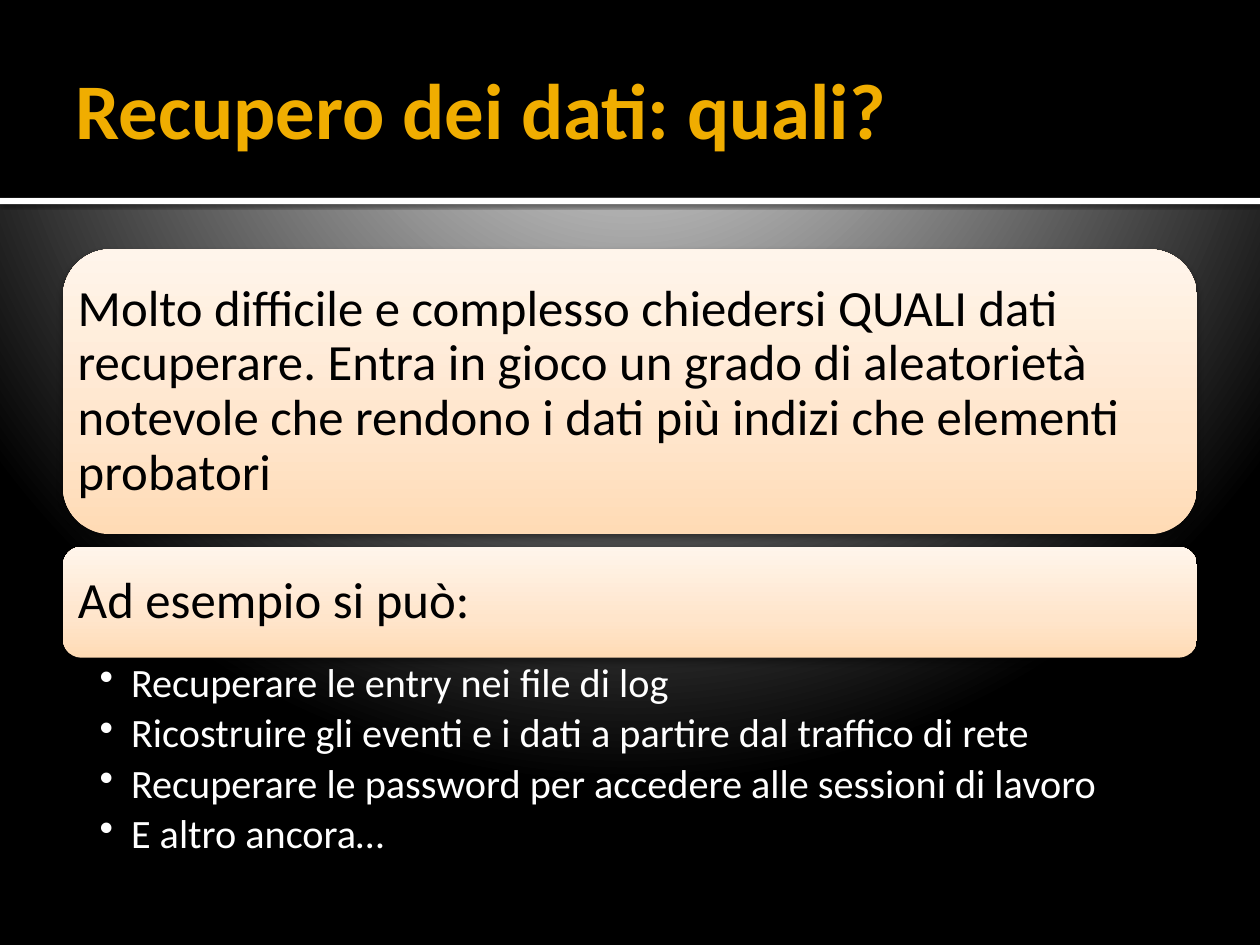
from dataclasses import dataclass

from lxml import etree
from pptx import Presentation
from pptx.dml.color import RGBColor
from pptx.enum.shapes import MSO_SHAPE
from pptx.enum.text import MSO_ANCHOR, PP_ALIGN
from pptx.oxml import parse_xml
from pptx.oxml.ns import nsdecls, qn
from pptx.util import Inches, Pt

RECTANGLE = MSO_SHAPE.RECTANGLE
ROUNDED = MSO_SHAPE.ROUNDED_RECTANGLE
LEFT = PP_ALIGN.LEFT
TOP = MSO_ANCHOR.TOP
MIDDLE = MSO_ANCHOR.MIDDLE


@dataclass(frozen=True)
class Theme:
    font: str = "Calibri"
    black: str = "000000"
    white: str = "FFFFFF"
    title: str = "F0AD00"
    panel: tuple = ((0, "FFDBB5"), (35, "FFE5CB"), (100, "FFF5EB"))
    backdrop: tuple = ((0, "C0C0C0"), (12, "C0C0C0"), (20, "BEBEBE"), (100, "000000"))
    title_size: int = 45
    panel_size: int = 29
    bullet_size: int = 23


theme = Theme()


def write_text(shape, text, size, color, insets, bold=False, anchor=MIDDLE,
               line_spacing=1.0, space_after=0, bullet=False):
    frame = shape.text_frame
    frame.word_wrap = True
    frame.vertical_anchor = anchor
    frame.margin_left, frame.margin_top, frame.margin_right, frame.margin_bottom = (
        Inches(inset) for inset in insets)
    frame.text = text
    for paragraph in frame.paragraphs:
        paragraph.alignment = LEFT
        paragraph.line_spacing = line_spacing
        paragraph.space_before = Pt(0)
        paragraph.space_after = Pt(space_after)
        font = paragraph.runs[0].font
        font.name = theme.font
        font.size = Pt(size)
        font.bold = bold
        font.color.rgb = RGBColor.from_string(color)
        if bullet:
            properties = paragraph._p.get_or_add_pPr()
            properties.set("marL", str(Inches(0.25)))
            properties.set("indent", str(Inches(-0.25)))
            etree.SubElement(properties, qn("a:buChar")).set("char", "•")


def gradient_xml(stops, direction):
    stop_xml = "".join(
        f'<a:gs pos="{position * 1000}"><a:srgbClr val="{color}"/></a:gs>'
        for position, color in stops)
    return (f'<a:gradFill {nsdecls("a")} rotWithShape="1">'
            f"<a:gsLst>{stop_xml}</a:gsLst>{direction}</a:gradFill>")


presentation = Presentation()
presentation.slide_width = Inches(10)
presentation.slide_height = Inches(7.5)
slide = presentation.slides.add_slide(presentation.slide_layouts[5])

radial = ('<a:path path="circle">'
          '<a:fillToRect l="10000" t="-25000" r="10000" b="125000"/></a:path>')
slide.background.fill.solid()
backdrop_fill = slide._element.cSld.find(".//" + qn("a:solidFill"))
backdrop_fill.getparent().replace(
    backdrop_fill, parse_xml(gradient_xml(theme.backdrop, radial)))

shadow_xml = (f'<a:effectLst {nsdecls("a")}><a:outerShdw blurRad="{{blur}}" '
              'dist="{distance}" dir="5400000" rotWithShape="0">'
              '<a:srgbClr val="000000"><a:alpha val="{alpha}"/></a:srgbClr>'
              "</a:outerShdw></a:effectLst>")

header_height = 1.57
for top, height, color in ((header_height, 0.05, theme.white),
                           (0, header_height, theme.black)):
    band = slide.shapes.add_shape(
        RECTANGLE, Inches(0), Inches(top), Inches(10), Inches(height))
    band.shadow.inherit = False
    band.fill.solid()
    band.fill.fore_color.rgb = RGBColor.from_string(color)
    band.line.fill.background()
    if color == theme.white:
        effects = band._element.spPr.find(qn("a:effectLst"))
        effects.getparent().replace(effects, parse_xml(shadow_xml.format(
            blur=Pt(2.5), distance=Pt(0.8), alpha=60000)))

title = slide.shapes.title
title.left, title.top, title.width, title.height = (
    Inches(value) for value in (0.5, 0.17, 9, 1.37))
write_text(title, "Recupero dei dati: quali?", theme.title_size, theme.title,
           (0.1, 0.05, 0.05, 0.05), bold=True)
slide.shapes._spTree.append(title._element)

panels = (
    (1.98, 2.26, "Molto difficile e complesso chiedersi QUALI dati recuperare. "
                 "Entra in gioco un grado di aleatorietà notevole che rendono "
                 "i dati più indizi che elementi probatori"),
    (4.34, 0.88, "Ad esempio si può:"),
)
for top, height, text in panels:
    panel = slide.shapes.add_shape(
        ROUNDED, Inches(0.5), Inches(top), Inches(9), Inches(height))
    panel.shadow.inherit = False
    panel.line.fill.background()
    panel.fill.solid()
    properties = panel._element.spPr
    properties.replace(
        properties.find(qn("a:solidFill")),
        parse_xml(gradient_xml(theme.panel, '<a:lin ang="16200000" scaled="0"/>')))
    properties.replace(
        properties.find(qn("a:effectLst")),
        parse_xml(shadow_xml.format(blur=Pt(3.5), distance=Pt(2), alpha=38000)))
    corner_inset = 0.05 * height
    write_text(panel, text, theme.panel_size, theme.black,
               (0.12 - corner_inset,) * 4, line_spacing=0.9)

examples = (
    "Recuperare le entry nei file di log",
    "Ricostruire gli eventi e i dati a partire dal traffico di rete",
    "Recuperare le password per accedere alle sessioni di lavoro",
    "E altro ancora…",
)
example_list = slide.shapes.add_textbox(
    Inches(0.5), Inches(5.22), Inches(9), Inches(1.74))
write_text(example_list, "\n".join(examples), theme.bullet_size, theme.white,
           (0.29, 0.04, 0.23, 0.04), anchor=TOP, line_spacing=0.9,
           space_after=4, bullet=True)

presentation.save("out.pptx")
